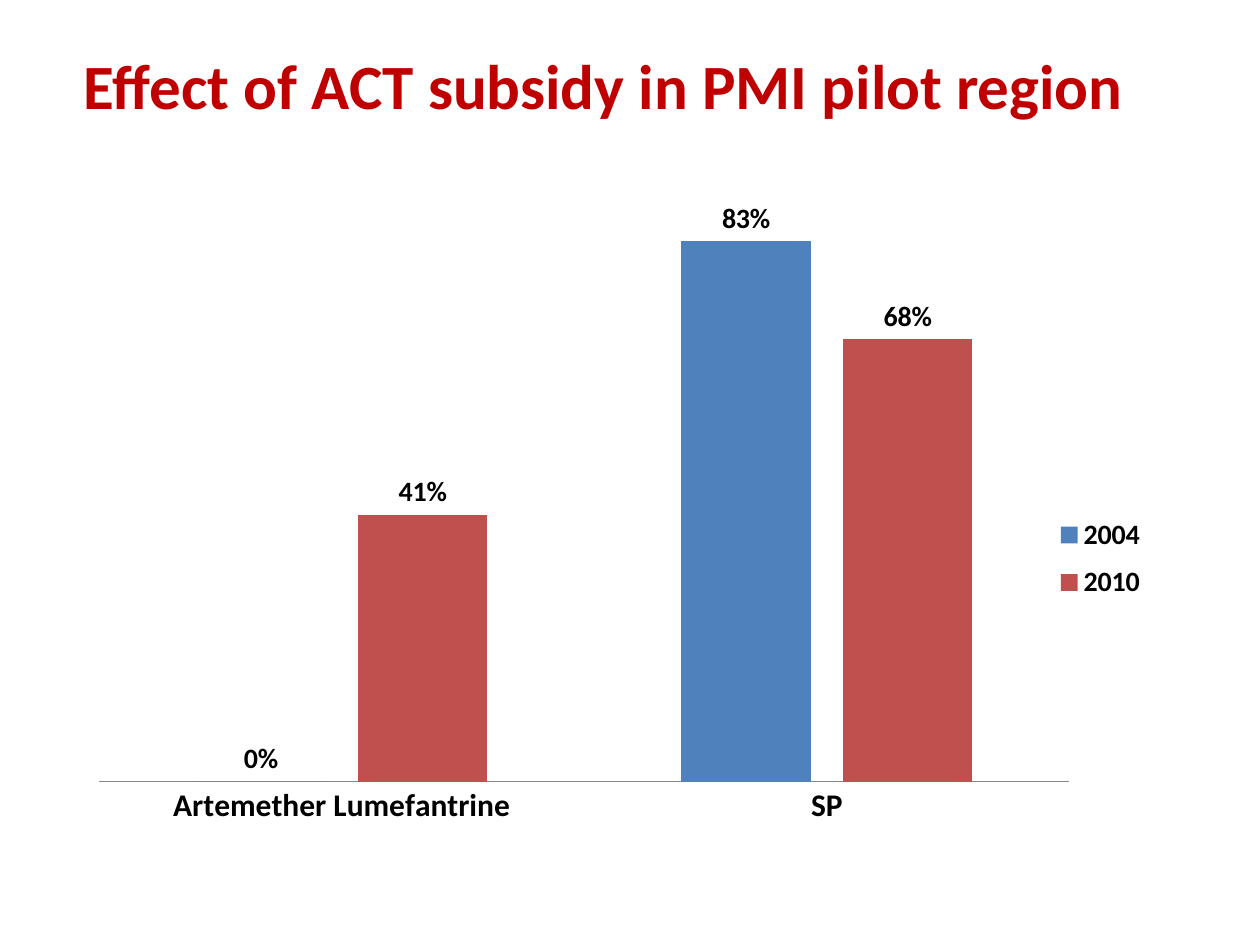
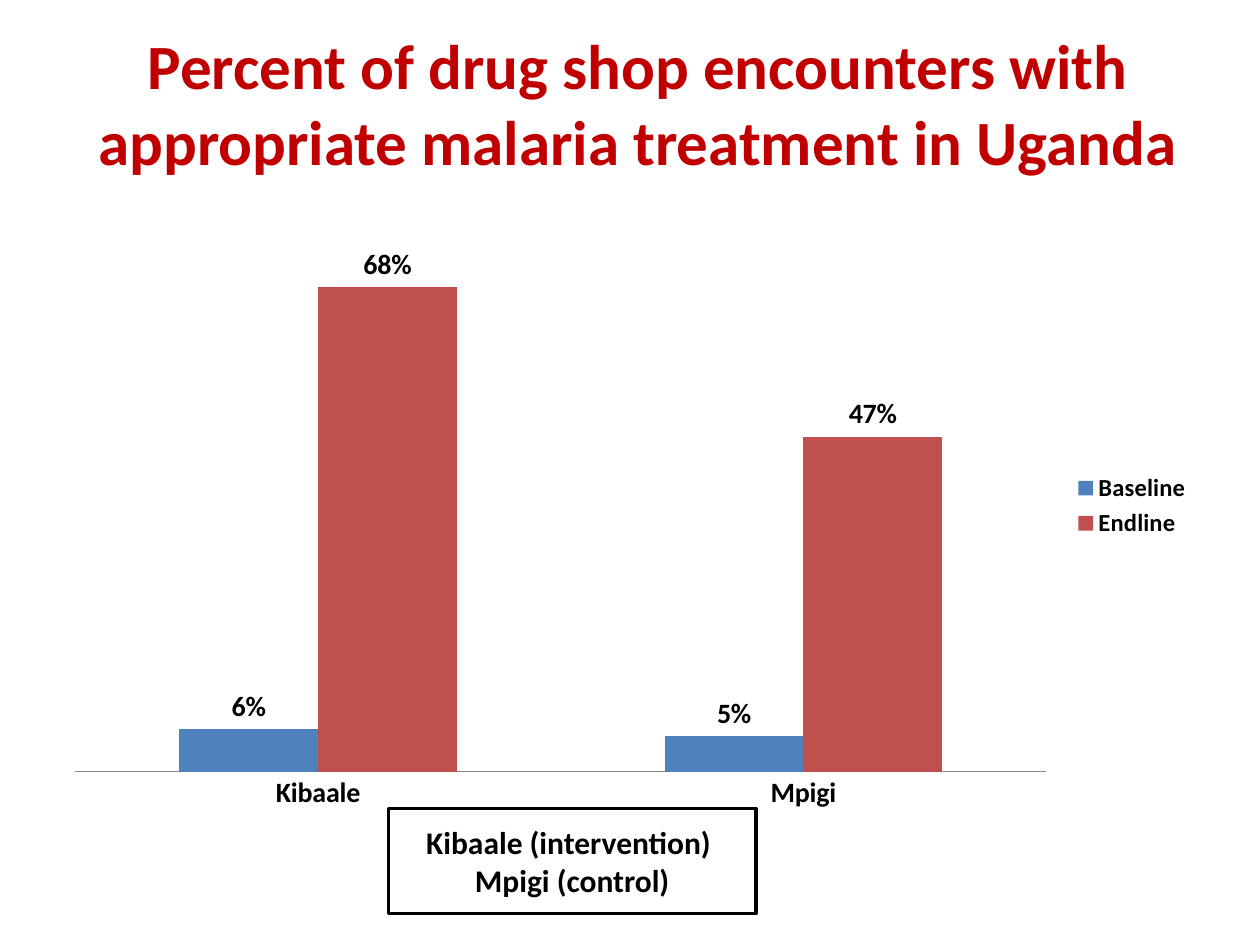
from dataclasses import dataclass

from lxml.etree import SubElement
from pptx import Presentation
from pptx.chart.data import CategoryChartData
from pptx.dml.color import RGBColor
from pptx.enum.chart import (
    XL_CHART_TYPE, XL_LABEL_POSITION, XL_LEGEND_POSITION, XL_TICK_MARK)
from pptx.enum.shapes import MSO_SHAPE
from pptx.enum.text import MSO_ANCHOR, MSO_AUTO_SIZE, PP_ALIGN
from pptx.oxml.ns import qn
from pptx.util import Pt


@dataclass(frozen=True)
class Theme:
    face: str = "Calibri"
    title: str = "C00000"
    ink: str = "000000"
    axis: str = "868686"
    bars: tuple = ("4F81BD", "C0504D")
    head: int = 36
    note: int = 18
    label: int = 16
    base: int = 10


THEME = Theme()

# Boxes are left, top, width, height in points;
# "plot" and "key" are the same as shares of the chart.
SLIDES = [
    {
        "title": "Effect of ACT subsidy in PMI pilot region",
        "title_box": (0, 0, 690, 96),
        "chart_box": (46, 109, 630, 374),
        "cats": ["Artemether Lumefantrine", "SP"],
        "series": {"2004": (0, 0.83), "2010": (0.41, 0.68)},
        "top": 0.9, "overlap": -25, "cat_size": 18, "key_size": 16,
        "plot": (0.017, 0.008, 0.88, 0.895),
        "key": (0.88, 0.48, 0.09, 0.165),
    },
    {
        "title": "Percent of drug shop encounters with "
                 "appropriate malaria treatment in Uganda",
        "title_box": (15, 15, 699, 87),
        "chart_box": (30, 108, 658, 362),
        "cats": ["Kibaale", "Mpigi"],
        "series": {"Baseline": (0.06, 0.05), "Endline": (0.68, 0.47)},
        "top": 0.8, "overlap": 0, "cat_size": 16, "key_size": 14,
        "plot": (0.02, 0.02, 0.843, 0.9),
        "note": ["Kibaale (intervention) ", "Mpigi (control)"],
        "note_box": (222, 462, 210, 60),
    },
]


def rgb(code):
    return RGBColor.from_string(code)


def pts(box):
    return [Pt(n) for n in box]


def style(font, size, color=THEME.ink, bold=True):
    font.name, font.size, font.bold = THEME.face, Pt(size), bold
    font.color.rgb = rgb(color)


def write(frame, lines, size, color):
    frame.word_wrap = True
    frame.auto_size = MSO_AUTO_SIZE.NONE
    frame.vertical_anchor = MSO_ANCHOR.MIDDLE
    for i, line in enumerate(lines):
        para = frame.add_paragraph() if i else frame.paragraphs[0]
        para.alignment = PP_ALIGN.CENTER
        run = para.add_run()
        run.text = line
        style(run.font, size, color)


def place(host, index, box, inner=False):
    """Give a plot area or legend a fixed place inside its chart."""
    for old in host.findall(qn("c:layout")):
        host.remove(old)
    layout = SubElement(host, qn("c:layout"))
    host.insert(index, layout)
    manual = SubElement(layout, qn("c:manualLayout"))
    pairs = [("layoutTarget", "inner")] if inner else []
    pairs += [("xMode", "edge"), ("yMode", "edge"), *zip("xywh", box)]
    for tag, val in pairs:
        SubElement(manual, qn("c:" + tag)).set("val", str(val))


def add_bars(slide, item):
    data = CategoryChartData(number_format="0%")
    data.categories = item["cats"]
    for name, vals in item["series"].items():
        data.add_series(name, vals)
    chart = slide.shapes.add_chart(
        XL_CHART_TYPE.COLUMN_CLUSTERED, *pts(item["chart_box"]), data).chart
    chart.has_title = False
    style(chart.font, THEME.base, bold=False)

    plot = chart.plots[0]
    plot.gap_width, plot.overlap = 150, item["overlap"]
    plot.vary_by_categories = False
    for series, color in zip(plot.series, THEME.bars):
        series.format.fill.solid()
        series.format.fill.fore_color.rgb = rgb(color)
        labels = series.data_labels
        labels.show_value = True
        labels.number_format = "0%"
        labels.number_format_is_linked = False
        labels.position = XL_LABEL_POSITION.OUTSIDE_END
        style(labels.font, THEME.label)

    cat, val = chart.category_axis, chart.value_axis
    cat.major_tick_mark = XL_TICK_MARK.NONE
    cat.format.line.color.rgb = rgb(THEME.axis)
    cat.format.line.width = Pt(0.75)
    style(cat.tick_labels.font, item["cat_size"])
    val.minimum_scale, val.maximum_scale = 0, item["top"]
    val.has_major_gridlines = False
    val.visible = False

    chart.has_legend = True
    key = chart.legend
    key.position = XL_LEGEND_POSITION.RIGHT
    key.include_in_layout = False
    style(key.font, item["key_size"])
    area = chart._chartSpace.find(".//" + qn("c:plotArea"))
    place(area, 0, item["plot"], inner=True)
    if "key" in item:
        place(key._element, 1, item["key"])


def add_note(slide, lines, box):
    note = slide.shapes.add_shape(MSO_SHAPE.RECTANGLE, *pts(box))
    note.shadow.inherit = False
    note.fill.background()
    note.line.color.rgb = rgb(THEME.ink)
    note.line.width = Pt(2)
    write(note.text_frame, lines, THEME.note, THEME.ink)


def main():
    deck = Presentation()
    deck.slide_width, deck.slide_height = Pt(720), Pt(540)
    for item in SLIDES:
        slide = deck.slides.add_slide(deck.slide_layouts[5])
        head = slide.shapes.title
        head.left, head.top, head.width, head.height = pts(item["title_box"])
        write(head.text_frame, [item["title"]], THEME.head, THEME.title)
        add_bars(slide, item)
        if "note" in item:
            add_note(slide, item["note"], item["note_box"])
    deck.save("out.pptx")


if __name__ == "__main__":
    main()
